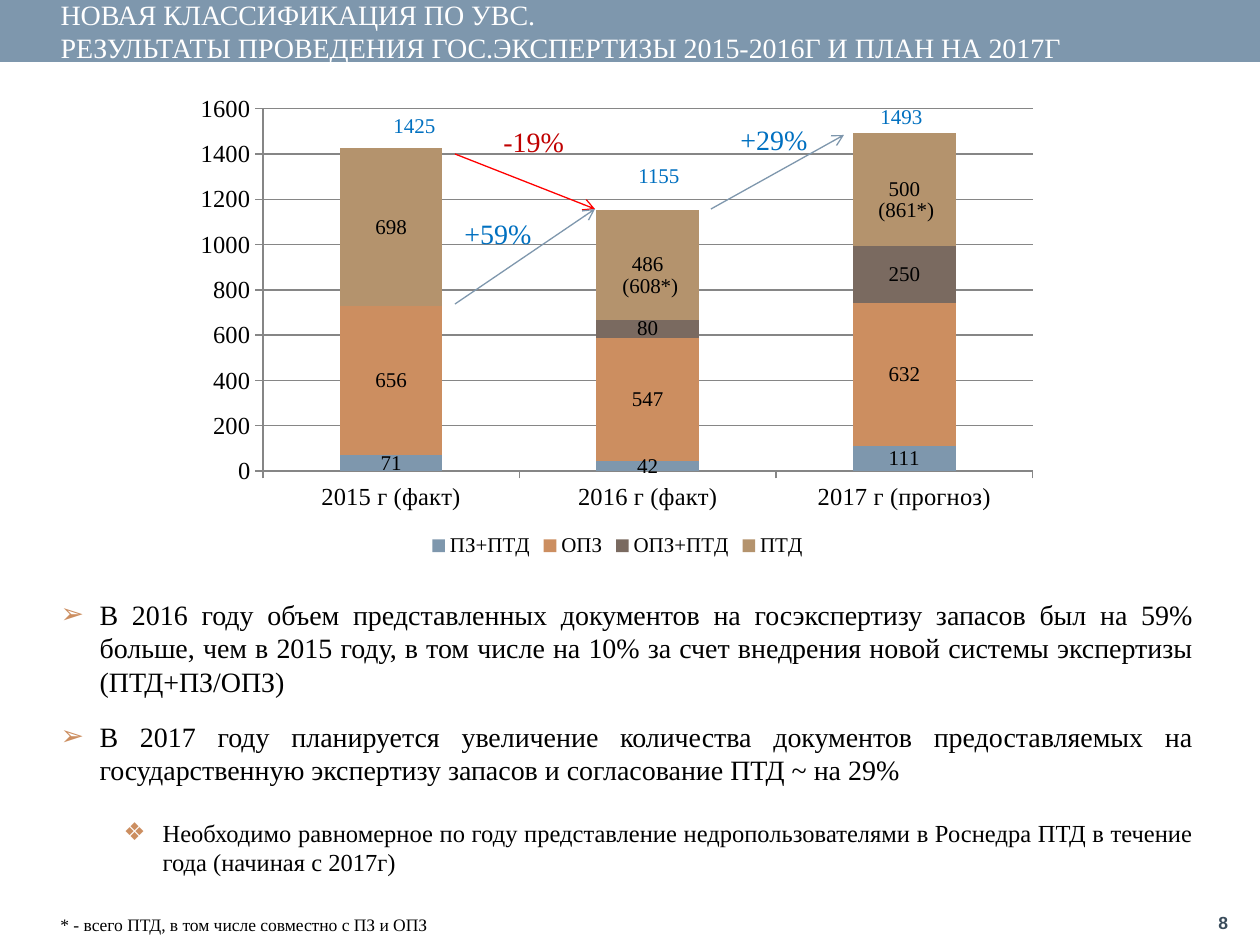
from lxml import etree
from pptx import Presentation
from pptx.chart.data import CategoryChartData
from pptx.dml.color import RGBColor
from pptx.enum.chart import XL_CHART_TYPE, XL_LEGEND_POSITION, XL_TICK_MARK
from pptx.enum.shapes import MSO_CONNECTOR, MSO_SHAPE
from pptx.enum.text import MSO_ANCHOR, MSO_AUTO_SIZE, PP_ALIGN
from pptx.oxml import parse_xml
from pptx.oxml.ns import nsdecls, qn
from pptx.util import Emu, Pt

STACKED = XL_CHART_TYPE.COLUMN_STACKED
BOTTOM = XL_LEGEND_POSITION.BOTTOM
OUTSIDE = XL_TICK_MARK.OUTSIDE
STRAIGHT = MSO_CONNECTOR.STRAIGHT
RECTANGLE = MSO_SHAPE.RECTANGLE
TOP, MIDDLE = MSO_ANCHOR.TOP, MSO_ANCHOR.MIDDLE
LEFT, JUSTIFY = PP_ALIGN.LEFT, PP_ALIGN.JUSTIFY
NO_FIT = MSO_AUTO_SIZE.NONE


class Theme:
    serif, sans = "Times New Roman", "Arial"
    white, black = "FFFFFF", "000000"
    steel, orange, umber, sand = "7E97AD", "CC8E60", "7A6A60", "B4936D"
    blue, red, dark_red = "0070C0", "FF0000", "C00000"
    navy, grid = "3A4C5B", "868686"
    large, medium, label, small = 16, 14, 12, 10


# Content; places are left, top, width, height in px
TITLE = ("НОВАЯ КЛАССИФИКАЦИЯ ПО УВС. \v"
         "РЕЗУЛЬТАТЫ ПРОВЕДЕНИЯ ГОС.ЭКСПЕРТИЗЫ 2015-2016Г И ПЛАН НА 2017Г")
YEARS = ["2015 г (факт)", "2016 г (факт)", "2017 г (прогноз)"]
SERIES = [
    ("ПЗ+ПТД", (71, 42, 111), Theme.steel),
    ("ОПЗ", (656, 547, 632), Theme.orange),
    ("ОПЗ+ПТД", (None, 80, 250), Theme.umber),
    ("ПТД", (698, 486, 500), Theme.sand),
]
# text, level, bullet, size, space before, space after
POINTS = [
    ("В 2016 году объем представленных документов на госэкспертизу запасов был на 59% "
     "больше, чем в 2015 году, в том числе на 10% за счет внедрения новой системы "
     "экспертизы (ПТД+ПЗ/ОПЗ)", 0, "➢", Theme.large, 0, 6),
    ("В 2017 году планируется увеличение количества документов предоставляемых на "
     "государственную экспертизу запасов и согласование ПТД ~ на 29%",
     0, "➢", Theme.large, 6, 6),
    ("Необходимо равномерное по году представление недропользователями в Роснедра ПТД "
     "в течение года (начиная с 2017г)", 1, "❖", Theme.medium, 12, 0),
]
# text, place, size, colour
NOTES = [
    ("1425", (381, 106, 89, 38), Theme.label, Theme.blue),
    ("1155", (626, 156, 89, 38), Theme.label, Theme.blue),
    ("1493", (868, 97, 89, 38), Theme.label, Theme.blue),
    ("-19%", (491, 118, 89, 47), Theme.large, Theme.dark_red),
    ("+29%", (728, 116, 106, 47), Theme.large, Theme.blue),
    ("+59%", (452, 210, 106, 47), Theme.large, Theme.blue),
    ("(608*)", (610, 266, 89, 38), Theme.label, Theme.black),
    ("(861*)", (866, 190, 89, 38), Theme.label, Theme.black),
    ("* - всего ПТД, в том числе совместно с ПЗ и ОПЗ",
     (48, 908, 533, 34), Theme.small, Theme.black),
]
# start, end, colour
ARROWS = [
    ((455, 154), (595, 209), Theme.red),
    ((711, 209), (844, 135), Theme.steel),
    ((455, 304), (595, 209), Theme.steel),
]
CHART = (184, 86, 867, 476)
PLOT = (263, 109, 770, 362)


def px(value):
    return Emu(round(value * 914400 / 126))


def place(shape, area):
    shape.left, shape.top, shape.width, shape.height = map(px, area)


def set_font(font, size, color=Theme.black, face=Theme.serif, bold=False):
    font.size, font.name, font.bold = Pt(size), face, bold
    font.color.rgb = RGBColor.from_string(color)


def write(para, text, align=LEFT, before=0, after=0, **style):
    para.text = text
    para.alignment = align
    para.line_spacing = 1.0
    para.space_before, para.space_after = Pt(before), Pt(after)
    for span in para.runs:
        set_font(span.font, **style)


def add_text(page, text, area, anchor=TOP, **style):
    box = page.shapes.add_textbox(*map(px, area))
    box.text_frame.word_wrap = True
    box.text_frame.vertical_anchor = anchor
    write(box.text_frame.paragraphs[0], text, **style)


def add_bullet(para, mark, color, margin, hang):
    props = para._p.get_or_add_pPr()
    props.set("marL", str(px(margin)))
    props.set("indent", str(-px(hang)))
    tint = etree.SubElement(props, qn("a:buClr"))
    etree.SubElement(tint, qn("a:srgbClr"), val=color)
    etree.SubElement(props, qn("a:buFont"), typeface=Theme.sans)
    etree.SubElement(props, qn("a:buChar"), char=mark)


def add_arrow(page, start, end, color):
    arrow = page.shapes.add_connector(STRAIGHT, *map(px, start + end))
    arrow.line.color.rgb = RGBColor.from_string(color)
    arrow.line.width = Pt(0.75)
    etree.SubElement(arrow.line._get_or_add_ln(), qn("a:tailEnd"), type="arrow")
    etree.SubElement(arrow._element.spPr, qn("a:effectLst"))


def add_chart(page):
    data = CategoryChartData()
    data.categories = YEARS
    for name, values, _ in SERIES:
        data.add_series(name, values)
    chart = page.shapes.add_chart(STACKED, *map(px, CHART), data).chart
    set_font(chart.font, Theme.medium)
    chart.has_title = False
    chart.has_legend = True
    chart.legend.position = BOTTOM
    chart.legend.include_in_layout = False
    set_font(chart.legend.font, Theme.label)

    plot = chart.plots[0]
    plot.gap_width, plot.overlap, plot.vary_by_categories = 150, 100, False
    for series, (_, _, color) in zip(plot.series, SERIES):
        series.format.fill.solid()
        series.format.fill.fore_color.rgb = RGBColor.from_string(color)
        series.data_labels.show_value = True
        set_font(series.data_labels.font, Theme.label)

    values = chart.value_axis
    values.minimum_scale, values.maximum_scale, values.major_unit = 0, 1600, 200
    values.has_major_gridlines = True
    for axis in (chart.category_axis, values):
        axis.major_tick_mark = OUTSIDE
        axis.format.line.color.rgb = RGBColor.from_string(Theme.grid)
    values.major_gridlines.format.line.color.rgb = RGBColor.from_string(Theme.grid)

    # Fixed inner plot area, as shares of the chart frame
    left, top, width, height = CHART
    shares = {"x": (PLOT[0] - left) / width, "y": (PLOT[1] - top) / height,
              "w": PLOT[2] / width, "h": PLOT[3] / height}
    sizes = "".join(f'<c:{key} val="{share:.3f}"/>' for key, share in shares.items())
    layout = parse_xml(
        f'<c:layout {nsdecls("c")}><c:manualLayout><c:layoutTarget val="inner"/>'
        f'<c:xMode val="edge"/><c:yMode val="edge"/>{sizes}</c:manualLayout></c:layout>')
    area = chart._chartSpace.chart.plotArea
    for old in area.findall(qn("c:layout")):
        area.remove(old)
    area.insert(0, layout)


def main():
    deck = Presentation()
    deck.slide_width, deck.slide_height = px(1260), px(945)
    page = deck.slides.add_slide(deck.slide_layouts[1])
    title, body = page.placeholders

    # Header band behind the title
    band = page.shapes.add_shape(RECTANGLE, *map(px, (0, 0, 1260, 62)))
    band.shadow.inherit = False
    band.fill.solid()
    band.fill.fore_color.rgb = RGBColor.from_string(Theme.steel)
    band.line.fill.background()
    title._element.addprevious(band._element)
    place(title, (48, -1, 1099, 64))
    title.text_frame.auto_size = NO_FIT
    title.text_frame.vertical_anchor = MIDDLE
    write(title.text_frame.paragraphs[0], TITLE, size=Theme.large, color=Theme.white)

    # Conclusions
    place(body, (48, 591, 1158, 295))
    frame = body.text_frame
    frame.auto_size = NO_FIT
    for index, (text, level, mark, size, before, after) in enumerate(POINTS):
        para = frame.add_paragraph() if index else frame.paragraphs[0]
        para.level = level
        write(para, text, align=JUSTIFY, before=before, after=after, size=size)
        add_bullet(para, mark, Theme.orange, margin=39 + 63 * level, hang=39)

    # Chart with its marks
    add_chart(page)
    for start, end, color in ARROWS:
        add_arrow(page, start, end, color)
    for text, area, size, color in NOTES:
        add_text(page, text, area, size=size, color=color)
    add_text(page, "8", (1206, 900, 53, 45), anchor=MIDDLE, size=Theme.small,
             color=Theme.navy, face=Theme.sans, bold=True)

    deck.save("out.pptx")


if __name__ == "__main__":
    main()
